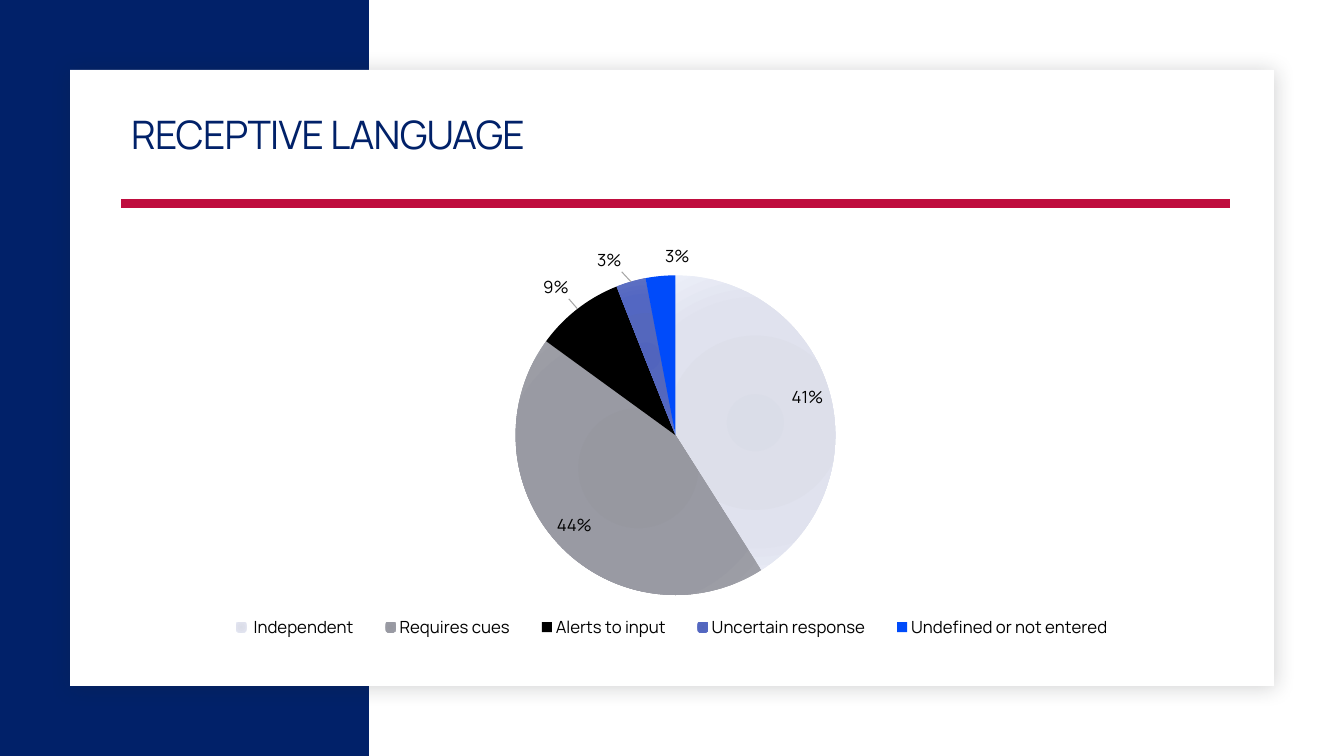
from pptx import Presentation
from pptx.chart.data import CategoryChartData
from pptx.dml.color import RGBColor
from pptx.enum.chart import XL_CHART_TYPE, XL_LABEL_POSITION, XL_LEGEND_POSITION
from pptx.enum.shapes import MSO_CONNECTOR, MSO_SHAPE
from pptx.enum.text import MSO_ANCHOR, MSO_AUTO_SIZE, PP_ALIGN
from pptx.oxml import parse_xml
from pptx.oxml.ns import nsdecls, qn
from pptx.util import Pt

FONT = "Manrope"
NAVY, CRIMSON, WHITE, BLACK, GREY = "012169", "BF0D3E", "FFFFFF", "000000", "A6A6A6"
SLIDE_WIDTH, SLIDE_HEIGHT = 960, 540
ANSWERS = [
    (" Independent", 41, ("DADDE8", "DDDFEA", "E0E2EE", "EBEEF8")),
    ("Requires cues", 44, ("95969F", "9798A0", "999AA3", "A1A2A9")),
    ("Alerts to input", 9, ("000000",)),
    ("Uncertain response", 3, ("5164BD", "5467BD", "5367C2", "6072C2")),
    ("Undefined or not entered", 3, ("004BFA",)),
]
LABEL_SHIFTS = {2: (-3.6, -3.8), 3: (-5.4, -3), 4: (21.2, -1.6)}
PIE_BOX = (281.8, 30.2, 228.4, 228.4)
LEGEND_BOX = (63.5, 270, 660, 23)


def color(value):
    """Turn a hex string into a colour."""
    return RGBColor.from_string(value)


def place(shape, box):
    """Move a shape into a box given in points."""
    shape.left, shape.top, shape.width, shape.height = map(Pt, box)


def style_font(font, size, fill):
    """Set the typeface, size and colour of a font."""
    font.name = FONT
    font.size = Pt(size)
    font.color.rgb = color(fill)


def add_panel(slide, box, fill):
    """Add a plain filled rectangle."""
    panel = slide.shapes.add_shape(MSO_SHAPE.RECTANGLE, *map(Pt, box))
    panel.shadow.inherit = False
    panel.fill.solid()
    panel.fill.fore_color.rgb = color(fill)
    panel.line.fill.background()
    return panel


def add_card(slide, box):
    """Add the white card with its soft shadow."""
    card = add_panel(slide, box, WHITE)
    card.element.spPr.find(qn("a:effectLst")).append(parse_xml(
        f'<a:outerShdw {nsdecls("a")} blurRad="{Pt(15)}" dist="{Pt(2)}" dir="2700000" '
        'algn="tl" rotWithShape="0"><a:srgbClr val="1F2125"><a:alpha val="20000"/>'
        '</a:srgbClr></a:outerShdw>'))


def add_heading(slide, box, text):
    """Fill the title placeholder and draw the rule below it."""
    left, top, width, height = box
    title = slide.shapes.title
    slide.shapes.element.append(title.element)
    place(title, (left, top, width, 46))
    frame = title.text_frame
    frame.auto_size = MSO_AUTO_SIZE.NONE
    frame.word_wrap = True
    frame.vertical_anchor = MSO_ANCHOR.MIDDLE
    paragraph = frame.paragraphs[0]
    paragraph.alignment = PP_ALIGN.LEFT
    paragraph.line_spacing = 0.9
    run = paragraph.add_run()
    run.text = text
    style_font(run.font, 28, NAVY)
    run.font._element.set("spc", "-50")
    bottom = top + height
    rule = slide.shapes.add_connector(
        MSO_CONNECTOR.STRAIGHT, Pt(left), Pt(bottom), Pt(left + width), Pt(bottom))
    rule.line.color.rgb = color(CRIMSON)
    rule.line.width = Pt(6)
    rule.element.spPr.append(parse_xml(f'<a:effectLst {nsdecls("a")}/>'))


def radial_fill(shades):
    """Build a circular gradient from four shades."""
    stops = "".join(
        f'<a:gs pos="{position}000"><a:srgbClr val="{shade}"/></a:gs>'
        for position, shade in zip((0, 34, 70, 100), shades))
    return parse_xml(
        f'<a:gradFill {nsdecls("a")} rotWithShape="1"><a:gsLst>{stops}</a:gsLst>'
        '<a:path path="circle"><a:fillToRect l="100000" t="100000" r="100000" b="100000"/>'
        '</a:path></a:gradFill>')


def manual_layout(**settings):
    """Build a manual chart layout."""
    parts = "".join(f'<c:{name} val="{value}"/>' for name, value in settings.items())
    return f'<c:layout {nsdecls("c")}><c:manualLayout>{parts}</c:manualLayout></c:layout>'


def set_layout(element, position, part_box, chart_box, **settings):
    """Fix a chart part to a box in points within the chart."""
    for layout in element.findall(qn("c:layout")):
        element.remove(layout)
    left, top, width, height = part_box
    _, _, chart_width, chart_height = chart_box
    element.insert(position, parse_xml(manual_layout(
        **settings, xMode="edge", yMode="edge", x=left / chart_width,
        y=top / chart_height, w=width / chart_width, h=height / chart_height)))


def shifted_label(index, across, down):
    """Build a percent label moved away from its slice."""
    flags = "".join(
        f'<c:show{name} val="{int(name == "Percent")}"/>'
        for name in ("LegendKey", "Val", "CatName", "SerName", "Percent", "BubbleSize"))
    return parse_xml(
        f'<c:dLbl {nsdecls("c")}><c:idx val="{index}"/>'
        f'{manual_layout(x=across, y=down)}<c:dLblPos val="bestFit"/>{flags}</c:dLbl>')


def style_labels(series, chart_box):
    """Show percentages on the slices with grey leader lines."""
    labels = series.data_labels
    labels.show_value = False
    labels.show_percentage = True
    labels.number_format = "0%"
    labels.number_format_is_linked = False
    labels.position = XL_LABEL_POSITION.BEST_FIT
    style_font(labels.font, 12, BLACK)
    _, _, width, height = chart_box
    for order, (index, (across, down)) in enumerate(LABEL_SHIFTS.items()):
        labels._element.insert(order, shifted_label(index, across / width, down / height))
    labels._element.append(parse_xml(
        f'<c:leaderLines {nsdecls("c", "a")}><c:spPr><a:ln w="{Pt(0.75)}"><a:solidFill>'
        f'<a:srgbClr val="{GREY}"/></a:solidFill></a:ln></c:spPr></c:leaderLines>'))


def add_pie(slide, box):
    """Add the pie of answers with its legend."""
    data = CategoryChartData()
    data.categories = [name for name, _, _ in ANSWERS]
    data.add_series("Series 1", [value for _, value, _ in ANSWERS])
    chart = slide.shapes.add_chart(XL_CHART_TYPE.PIE, *map(Pt, box), data).chart
    chart.has_title = False
    style_font(chart.font, 12, BLACK)
    chart.has_legend = True
    chart.legend.position = XL_LEGEND_POSITION.BOTTOM
    chart.legend.include_in_layout = False
    style_font(chart.legend.font, 12, BLACK)
    plot = chart.plots[0]
    plot.vary_by_categories = True
    series = plot.series[0]
    for index, (_, _, shades) in enumerate(ANSWERS):
        fill = series.points[index].format.fill
        fill.solid()
        fill.fore_color.rgb = color(shades[0])
    for point, (_, _, shades) in zip(chart.element.iter(qn("c:dPt")), ANSWERS):
        if len(shades) > 1:
            solid = point.find(f'{qn("c:spPr")}/{qn("a:solidFill")}')
            solid.getparent().replace(solid, radial_fill(shades))
    style_labels(series, box)
    root = chart.element.find(qn("c:chart"))
    set_layout(root.find(qn("c:plotArea")), 0, PIE_BOX, box, layoutTarget="inner")
    set_layout(root.find(qn("c:legend")), 1, LEGEND_BOX, box)


def build_slide(presentation):
    """Build the receptive language slide."""
    slide = presentation.slides.add_slide(presentation.slide_layouts[5])
    add_panel(slide, (0, 0, 263.5, SLIDE_HEIGHT), NAVY)
    add_card(slide, (50, 50, 860, 440))
    add_heading(slide, (86.5, 74.5, 792, 71), "RECEPTIVE LANGUAGE")
    add_pie(slide, (86.5, 166.5, 792, 296))


def main():
    """Create and save the presentation."""
    presentation = Presentation()
    presentation.slide_width = Pt(SLIDE_WIDTH)
    presentation.slide_height = Pt(SLIDE_HEIGHT)
    build_slide(presentation)
    presentation.save("out.pptx")


if __name__ == "__main__":
    main()
